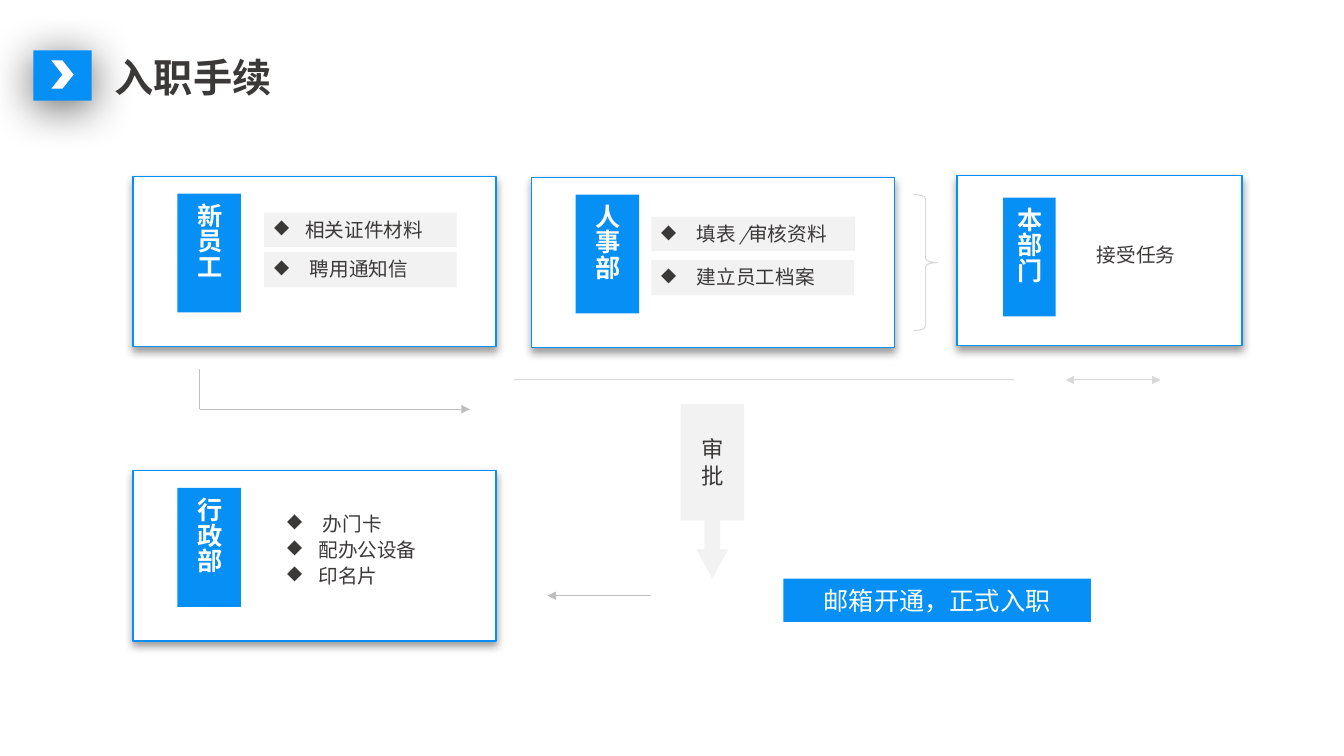
from dataclasses import dataclass

from lxml.etree import SubElement
from pptx import Presentation
from pptx.dml.color import RGBColor
from pptx.enum.shapes import MSO_CONNECTOR, MSO_SHAPE
from pptx.enum.text import MSO_ANCHOR, MSO_AUTO_SIZE, PP_ALIGN
from pptx.oxml.ns import qn
from pptx.util import Inches, Pt


@dataclass(frozen=True)
class Theme:
    font: str = "Noto Sans CJK SC"
    blue: str = "068FF5"
    white: str = "FFFFFF"
    ink: str = "3B3838"
    pale: str = "F2F2F2"
    rule: str = "D9D9D9"
    arrow: str = "BFBFBF"
    title: int = 28
    label: int = 18
    step: int = 16
    body: int = 14


THEME = Theme()
CARD_HEIGHT, LABEL_HEIGHT = 1.69, 1.18


def add_tag(parent, tag, **attributes):
    return SubElement(parent, qn(tag), {key: str(value) for key, value in attributes.items()})


def cast_shadow(shape, alpha, blur, distance):
    """Drop a black shadow straight down; alpha in percent, lengths in points."""
    effects = add_tag(shape._element.spPr, "a:effectLst")
    shadow = add_tag(effects, "a:outerShdw", blurRad=Pt(blur), dist=Pt(distance),
                     dir=90 * 60000, algn="ctr", rotWithShape=0)
    add_tag(add_tag(shadow, "a:srgbClr", val="000000"), "a:alpha", val=alpha * 1000)


def add_block(slide, box, fill=None, line=None, width=1.0, kind=MSO_SHAPE.RECTANGLE, shadow=None):
    block = slide.shapes.add_shape(kind, *map(Inches, box))
    if shadow:
        cast_shadow(block, *shadow)
    else:
        block.shadow.inherit = False
    if fill:
        block.fill.solid()
        block.fill.fore_color.rgb = RGBColor.from_string(fill)
    else:
        block.fill.background()
    if line:
        block.line.color.rgb = RGBColor.from_string(line)
        block.line.width = Pt(width)
    else:
        block.line.fill.background()
    return block


def add_text_box(slide, box):
    return slide.shapes.add_textbox(*map(Inches, box))


def add_run(paragraph, text, size, color, bold=False, italic=False):
    run = paragraph.add_run()
    run.text = text
    run.font.size, run.font.bold, run.font.italic = Pt(size), bold, italic
    run.font.name = THEME.font
    run.font.color.rgb = RGBColor.from_string(color)
    add_tag(run._r.get_or_add_rPr(), "a:ea", typeface=THEME.font)


def write(shape, lines, size, color=THEME.ink, bold=False, align=PP_ALIGN.CENTER,
          anchor=MSO_ANCHOR.TOP, wrap=False, grow=False, vertical=False,
          spacing=None, spaced=False, bullet=False):
    """Fill a shape with lines, each a list of (text, italic) runs or a plain string."""
    frame = shape.text_frame
    frame.word_wrap = wrap
    frame.vertical_anchor = anchor
    frame.auto_size = MSO_AUTO_SIZE.SHAPE_TO_FIT_TEXT if grow else MSO_AUTO_SIZE.NONE
    if vertical:
        frame._txBody.bodyPr.set("vert", "eaVert")
    for index, line in enumerate(lines):
        paragraph = frame.paragraphs[0] if index == 0 else frame.add_paragraph()
        paragraph.alignment = align
        if spacing:
            paragraph.line_spacing = spacing
        properties = paragraph._p.get_or_add_pPr()
        if spaced:
            add_tag(add_tag(properties, "a:spcBef"), "a:spcPct", val=50000)
        if bullet:
            properties.set("marL", str(Inches(0.31)))
            properties.set("indent", str(-Inches(0.31)))
            add_tag(properties, "a:buChar", char="◆")
        for text, italic in [(line, False)] if isinstance(line, str) else line:
            add_run(paragraph, text, size, color, bold, italic)


def add_bullets(shape, lines, spacing=None):
    write(shape, lines, THEME.body, align=PP_ALIGN.LEFT, wrap=True, grow=True,
          spacing=spacing, spaced=True, bullet=True)


def add_line(slide, start, end, color, head=False, tail=False):
    line = slide.shapes.add_connector(MSO_CONNECTOR.STRAIGHT, *map(Inches, (*start, *end)))
    line.line.color.rgb = RGBColor.from_string(color)
    line.line.width = Pt(0.75)
    for tag, shown in (("a:headEnd", head), ("a:tailEnd", tail)):
        if shown:
            add_tag(line.line._get_or_add_ln(), tag, type="triangle")
    add_tag(line._element.spPr, "a:effectLst")


def add_card(slide, left, top, width=3.6):
    add_block(slide, (left, top, width, CARD_HEIGHT), THEME.white, THEME.blue, shadow=(39, 6, 3))


def add_department(slide, name, left, top):
    """Draw a wide card with its upright name label."""
    add_card(slide, left, top)
    label = add_block(slide, (left + 0.44, top + 0.17, 0.63, LABEL_HEIGHT), THEME.blue)
    write(label, [name], THEME.label, THEME.white, bold=True,
          anchor=MSO_ANCHOR.MIDDLE, vertical=True)


def add_own_department(slide, left, top):
    add_card(slide, left, top, 2.83)
    label = add_block(slide, (left + 0.46, top + 0.22, 0.52, LABEL_HEIGHT), THEME.blue)
    frame = label.text_frame
    frame.margin_left = frame.margin_right = Inches(0.11)
    write(label, ["本部门"], THEME.label, THEME.white, bold=True,
          wrap=True, grow=True, vertical=True, spaced=True)
    task = add_text_box(slide, (left + 1.29, top + 0.62, 0.98, 0.33))
    write(task, ["接受任务"], THEME.body, grow=True)


def add_heading(slide, text):
    add_block(slide, (0.33, 0.5, 0.58, 0.5), THEME.blue, shadow=(62, 32, 5))
    add_block(slide, (0.51, 0.6, 0.22, 0.28), THEME.white, kind=MSO_SHAPE.CHEVRON)
    heading = add_text_box(slide, (1.04, 0.53, 1.77, 0.53))
    write(heading, [text], THEME.title, bold=True, align=PP_ALIGN.LEFT, grow=True, spacing=0.9)


def add_approval(slide):
    approval = add_block(slide, (6.75, 4.01, 0.63, 1.73), THEME.pale,
                         kind=MSO_SHAPE.DOWN_ARROW_CALLOUT)
    for index, value in enumerate((0.25, 0.25, 0.458, 0.667)):
        approval.adjustments[index] = value
    write(approval, ["审", "批"], THEME.step, anchor=MSO_ANCHOR.MIDDLE)


def add_outcome(slide, text):
    add_block(slide, (7.77, 5.74, 3.05, 0.43), THEME.blue)
    outcome = add_text_box(slide, (8.06, 5.84, 2.47, 0.32))
    write(outcome, [text], THEME.label, THEME.white, grow=True, spacing=0.7, spaced=True)


def main():
    deck = Presentation()
    deck.slide_width, deck.slide_height = Inches(13.33), Inches(7.5)
    slide = deck.slides.add_slide(deck.slide_layouts[6])

    add_heading(slide, "入职手续")
    for name, left, top in (("人事部", 5.27, 1.76), ("新员工", 1.32, 1.75), ("行政部", 1.32, 4.67)):
        add_department(slide, name, left, top)
    add_own_department(slide, 9.49, 1.74)

    for box, line in (
        ((6.46, 2.15, 2.02, 0.34), [(" 填表 ", False), ("/", True), ("审核资料", False)]),
        ((6.46, 2.58, 2.01, 0.35), " 建立员工档案"),
        ((2.62, 2.11, 1.91, 0.34), "相关证件材料"),
        ((2.62, 2.5, 1.91, 0.35), " 聘用通知信"),
    ):
        add_bullets(add_block(slide, box, THEME.pale), [line])
    office_tasks = add_text_box(slide, (2.75, 5.09, 1.93, 0.84))
    add_bullets(office_tasks, [" 办门卡", "配办公设备", "印名片"], spacing=0.7)

    brace = add_block(slide, (9.06, 1.93, 0.24, 1.35), line=THEME.rule, width=0.75,
                      kind=MSO_SHAPE.RIGHT_BRACE)
    brace.adjustments[0] = 0.166
    add_line(slide, (5.1, 3.77), (10.06, 3.77), THEME.rule)
    add_line(slide, (10.57, 3.77), (11.51, 3.77), THEME.rule, head=True, tail=True)
    add_line(slide, (1.98, 3.66), (1.98, 4.06), THEME.arrow)
    add_line(slide, (1.98, 4.06), (4.66, 4.06), THEME.arrow, tail=True)
    add_line(slide, (6.46, 5.91), (5.43, 5.91), THEME.arrow, tail=True)

    add_approval(slide)
    add_outcome(slide, "邮箱开通，正式入职")
    deck.save("out.pptx")


if __name__ == "__main__":
    main()
